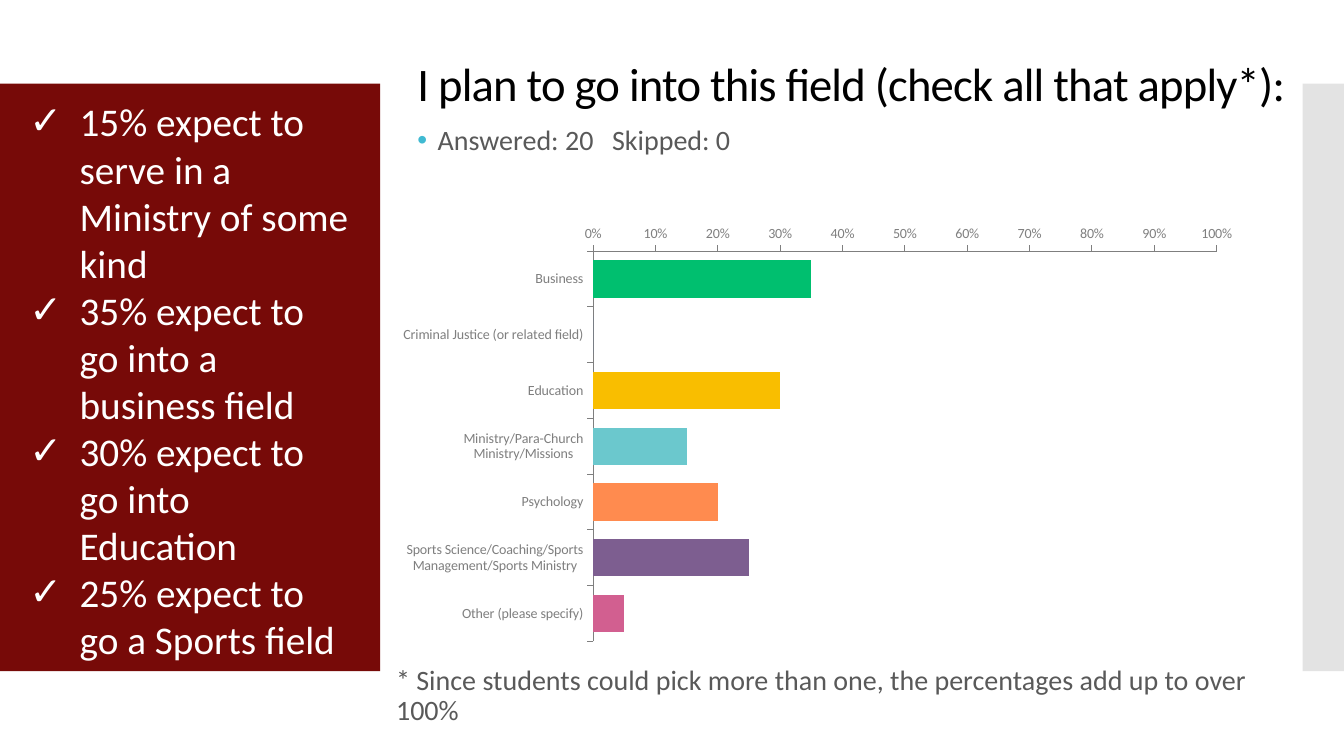
"""Build a survey slide with a findings panel and a bar chart of career fields."""
from typing import NamedTuple

from lxml import etree
from pptx import Presentation
from pptx.chart.data import CategoryChartData
from pptx.dml.color import RGBColor
from pptx.enum.chart import XL_AXIS_CROSSES, XL_CHART_TYPE, XL_TICK_LABEL_POSITION, XL_TICK_MARK
from pptx.enum.shapes import MSO_SHAPE
from pptx.enum.text import MSO_ANCHOR, MSO_AUTO_SIZE, PP_ALIGN
from pptx.oxml.ns import qn
from pptx.util import Inches, Pt

BAR = XL_CHART_TYPE.BAR_CLUSTERED
LOW = XL_TICK_LABEL_POSITION.LOW
OUT = XL_TICK_MARK.OUTSIDE
NONE = XL_TICK_MARK.NONE
MAX = XL_AXIS_CROSSES.MAXIMUM
RECT = MSO_SHAPE.RECTANGLE
TOP = MSO_ANCHOR.TOP
MIDDLE = MSO_ANCHOR.MIDDLE
FIXED = MSO_AUTO_SIZE.NONE
LEFT = PP_ALIGN.LEFT

FONT = "Calibri"
BLACK = RGBColor(0x00, 0x00, 0x00)
WHITE = RGBColor(0xFF, 0xFF, 0xFF)
MAROON = RGBColor(0x77, 0x0A, 0x08)
SILVER = RGBColor(0xC8, 0xC8, 0xC8)
SLATE = RGBColor(0x59, 0x59, 0x59)
GRAY = RGBColor(0x7F, 0x7F, 0x7F)
AQUA = RGBColor(0x40, 0xBA, 0xD2)


class Box(NamedTuple):
    left: float
    top: float
    width: float
    height: float


class Panel(NamedTuple):
    box: Box
    color: RGBColor
    alpha: int


class Field(NamedTuple):
    name: str
    share: float
    color: RGBColor


PANELS = [
    Panel(Box(0, 0.83, 3.77, 5.83), MAROON, 100),
    Panel(Box(12.92, 0.83, 0.42, 5.83), SILVER, 50),
]
FIELDS = [
    Field("Business", 0.35, RGBColor(0x00, 0xBF, 0x6F)),
    Field("Criminal Justice (or related field)", 0, RGBColor(0x50, 0x7C, 0xB6)),
    Field("Education", 0.3, RGBColor(0xF9, 0xBE, 0x00)),
    Field("Ministry/Para-Church Ministry/Missions", 0.15, RGBColor(0x6B, 0xC8, 0xCD)),
    Field("Psychology", 0.2, RGBColor(0xFF, 0x8B, 0x4F)),
    Field("Sports Science/Coaching/Sports Management/Sports Ministry", 0.25,
          RGBColor(0x7D, 0x5E, 0x90)),
    Field("Other (please specify)", 0.05, RGBColor(0xD2, 0x5F, 0x90)),
]
FACTS = [
    "15% expect to serve in a Ministry of some kind",
    "35% expect to go into a business field",
    "30% expect to go into Education",
    "25% expect to go a Sports field",
]


def place(shape, box: Box) -> None:
    """Move and size a shape."""
    shape.left, shape.top, shape.width, shape.height = map(Inches, box)


def mark(para, sign: str, indent: float, tint: RGBColor | None, tab: float) -> None:
    """Set the bullet, hanging indent and tab stop of a paragraph."""
    props = para._p.get_or_add_pPr()
    props.set("marL", str(Inches(indent)))
    props.set("indent", str(-Inches(indent)))
    if tint is not None:
        color = etree.SubElement(props, qn("a:buClr"))
        etree.SubElement(color, qn("a:srgbClr"), val=str(tint))
    if sign:
        etree.SubElement(props, qn("a:buChar"), char=sign)
    else:
        etree.SubElement(props, qn("a:buNone"))
    if tab:
        stops = etree.SubElement(props, qn("a:tabLst"))
        etree.SubElement(stops, qn("a:tab"), pos=str(Inches(tab)), algn="l")


def write(shape, box: Box, lines: list[str], *, size: float, color: RGBColor,
          space: float = 0.9, before: float = 0, anchor=TOP, sign: str = "",
          indent: float = 0, tint: RGBColor | None = None, tab: float = 0,
          track: float = 0) -> None:
    """Place a text shape and fill it with formatted paragraphs."""
    place(shape, box)
    frame = shape.text_frame
    frame.word_wrap = True
    frame.auto_size = FIXED
    frame.vertical_anchor = anchor
    for i, line in enumerate(lines):
        para = frame.add_paragraph() if i else frame.paragraphs[0]
        para.alignment = LEFT
        para.line_spacing = space
        para.space_before = Pt(before)
        mark(para, sign, indent, tint, tab)
        run = para.add_run()
        run.text = line
        run.font.name = FONT
        run.font.size = Pt(size)
        run.font.color.rgb = color
        if track:
            run.font._element.set("spc", str(round(track * 100)))


def draw(slide, panel: Panel) -> None:
    """Draw a side panel behind the title."""
    shape = slide.shapes.add_shape(RECT, *map(Inches, panel.box))
    shape.shadow.inherit = False
    shape.fill.solid()
    shape.fill.fore_color.rgb = panel.color
    shape.line.fill.background()
    if panel.alpha < 100:
        tone = shape.element.spPr.find(".//" + qn("a:srgbClr"))
        etree.SubElement(tone, qn("a:alpha"), val=str(panel.alpha * 1000))
    slide.shapes.title.element.addprevious(shape.element)


def style(axis) -> None:
    """Give an axis its ticks, line and labels."""
    axis.has_major_gridlines = False
    axis.major_tick_mark = OUT
    axis.minor_tick_mark = NONE
    axis.format.line.color.rgb = GRAY
    axis.format.line.width = Pt(0.75)
    font = axis.tick_labels.font
    font.name = FONT
    font.size = Pt(10)
    font.color.rgb = GRAY


def plot(slide, box: Box, fields: list[Field]) -> None:
    """Add the bar chart of fields."""
    data = CategoryChartData()
    data.categories = [field.name for field in fields]
    data.add_series("Series 1", [field.share for field in fields])
    chart = slide.shapes.add_chart(BAR, *map(Inches, box), data).chart
    chart.has_legend = False
    chart.has_title = False
    chart.font.name = FONT
    chart.font.size = Pt(18)
    chart.font.color.rgb = BLACK
    names, scale = chart.category_axis, chart.value_axis
    style(names)
    style(scale)
    names.reverse_order = True
    names.crosses = MAX
    names.tick_label_position = LOW
    scale.minimum_scale, scale.maximum_scale = 0, 1
    scale.major_unit = 0.1
    scale.tick_labels.number_format = "0%"
    scale.tick_labels.number_format_is_linked = False
    bars = chart.plots[0]
    bars.gap_width, bars.overlap = 50, 100
    bars.vary_by_categories = False
    for i, field in enumerate(fields):
        fill = bars.series[0].points[i].format.fill
        fill.solid()
        fill.fore_color.rgb = field.color


def main() -> None:
    """Build and save the slide."""
    deck = Presentation()
    deck.slide_width, deck.slide_height = Inches(13.33), Inches(7.5)
    slide = deck.slides.add_slide(deck.slide_layouts[3])
    for panel in PANELS:
        draw(slide, panel)
    title, facts, count = slide.placeholders
    write(facts, Box(0.19, 0.92, 3.39, 5.76), FACTS, size=28, color=WHITE,
          space=1, sign="✓", indent=0.5)
    write(title, Box(4.04, 0.56, 9, 0.6),
          ["I plan to go into this field (check all that apply*):"],
          size=33.3, color=BLACK, anchor=MIDDLE, track=-0.6)
    write(count, Box(4.04, 1.2, 8.75, 0.44), ["Answered: 20\tSkipped: 0"], size=20,
          color=SLATE, before=12, sign="•", indent=0.2, tint=AQUA, tab=1.93)
    note = Box(3.83, 6.56, 9.21, 0.73)
    write(slide.shapes.add_textbox(*map(Inches, note)), note,
          ["* Since students could pick more than one, the percentages add up to over 100%"],
          size=20, color=SLATE, before=12)
    plot(slide, Box(3.83, 2.15, 8.56, 4.3), FIELDS)
    deck.save("out.pptx")


if __name__ == "__main__":
    main()
